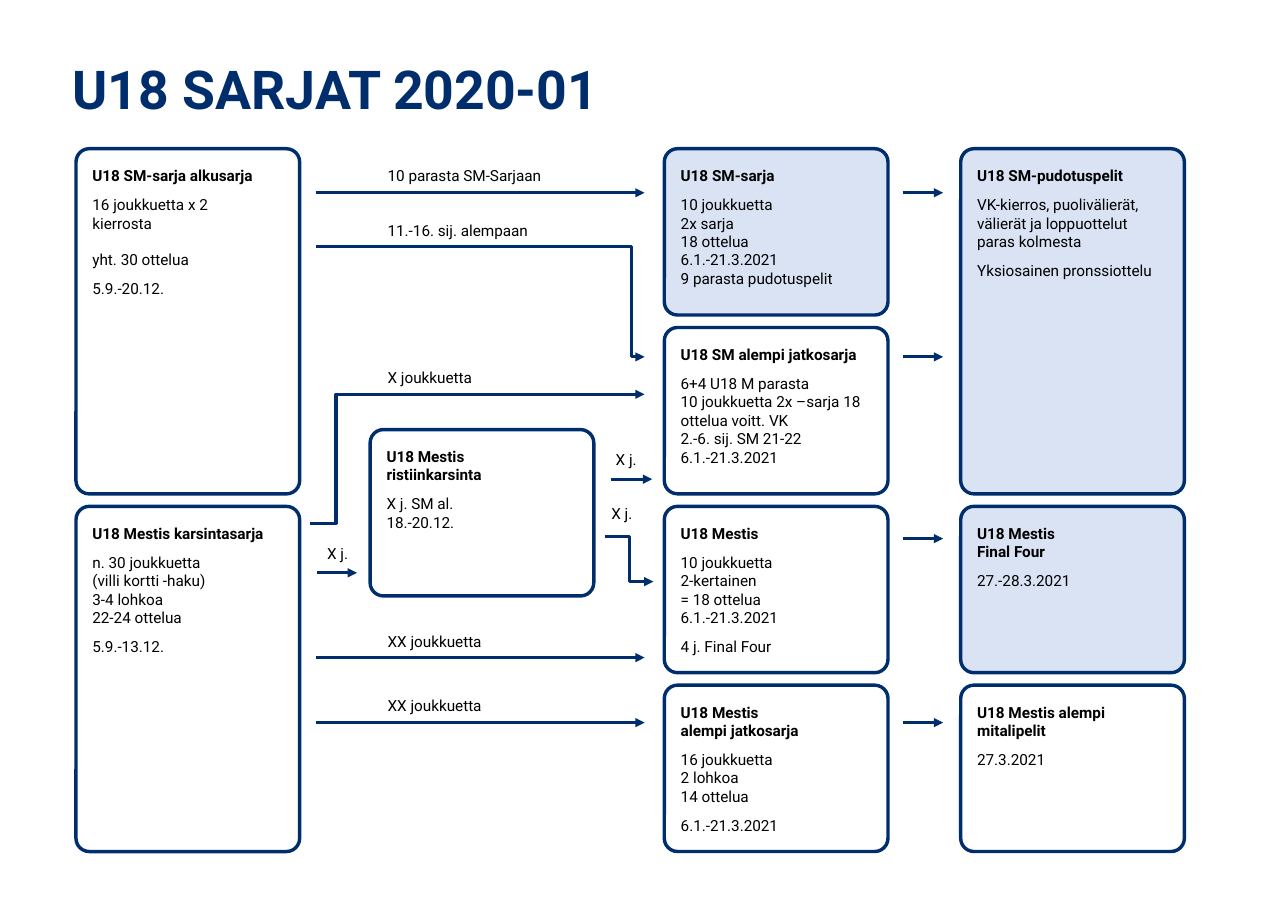
from lxml import etree
from pptx import Presentation
from pptx import util as u
from pptx.dml.color import RGBColor
from pptx.enum import shapes, text
from pptx.oxml.ns import qn

COLORS = {"navy": "002E6D", "pale": "DAE3F3", "black": "000000"}
FONT = "Roboto"

START, CROSS, SERIES, FINALS = 0.69, 3.36, 6.03, 8.72
BOX_WIDTH, BOX_HEIGHT = 2.03, 1.51
TOP, ROW_STEP = 1.35, 4.87 / 3
ROWS = [TOP + row * ROW_STEP for row in range(4)]
TALL = ROW_STEP + BOX_HEIGHT
CORNER = 0.12
GROUP_GAP, LINE_GAP = 7, 12

# left, top, height, fill, text width, heading, groups of (space before, lines)
BOXES = [
    (START, ROWS[0], TALL, None, 1.81, "U18 SM-sarja alkusarja",
     [(GROUP_GAP, ["16 joukkuetta x 2 kierrosta"]),
      (LINE_GAP, ["yht. 30 ottelua"]),
      (GROUP_GAP, ["5.9.-20.12."])]),
    (START, ROWS[2], TALL, None, 1.81, "U18 Mestis karsintasarja",
     [(GROUP_GAP, ["n. 30 joukkuetta", "(villi kortti -haku)", "3-4 lohkoa",
                   "22-24 ottelua"]),
      (GROUP_GAP, ["5.9.-13.12."])]),
    (CROSS, 3.9, BOX_HEIGHT, None, 1.81, "U18 Mestis\vristiinkarsinta",
     [(GROUP_GAP, ["X j. SM al.", "18.-20.12."])]),
    (SERIES, ROWS[0], BOX_HEIGHT, "pale", 1.81, "U18 SM-sarja",
     [(GROUP_GAP, ["10 joukkuetta", "2x sarja", "18 ottelua", "6.1.-21.3.2021",
                   "9 parasta pudotuspelit"])]),
    (SERIES, ROWS[1], BOX_HEIGHT, None, 1.94, "U18 SM alempi jatkosarja",
     [(GROUP_GAP, ["6+4 U18 M parasta",
                   "10 joukkuetta 2x –sarja 18 ottelua voitt. VK",
                   "2.-6. sij. SM 21-22", "6.1.-21.3.2021"])]),
    (SERIES, ROWS[2], BOX_HEIGHT, None, 1.94, "U18 Mestis",
     [(GROUP_GAP, ["10 joukkuetta", "2-kertainen", "= 18 ottelua",
                   "6.1.-21.3.2021"]),
      (GROUP_GAP, ["4 j. Final Four"])]),
    (SERIES, ROWS[3], BOX_HEIGHT, None, 1.81, "U18 Mestis\valempi jatkosarja",
     [(GROUP_GAP, ["16 joukkuetta", "2 lohkoa", "14 ottelua"]),
      (GROUP_GAP, ["6.1.-21.3.2021"])]),
    (FINALS, ROWS[0], TALL, "pale", 1.81, "U18 SM-pudotuspelit",
     [(GROUP_GAP, ["VK-kierros, puolivälierät,\vvälierät ja loppuottelut\v"
                   "paras kolmesta"]),
      (GROUP_GAP, ["Yksiosainen pronssiottelu"])]),
    (FINALS, ROWS[2], BOX_HEIGHT, "pale", 1.81, "U18 Mestis\vFinal Four",
     [(GROUP_GAP, ["27.-28.3.2021"])]),
    (FINALS, ROWS[3], BOX_HEIGHT, None, 1.81, "U18 Mestis alempi\vmitalipelit",
     [(GROUP_GAP, ["27.3.2021"])]),
]

# left, top, width, wording
LABELS = [
    (3.42, 1.46, 1.97, "10 parasta SM-Sarjaan"),
    (3.42, 1.96, 2.24, "11.-16. sij. alempaan"),
    (3.42, 3.29, 1.81, "X joukkuetta"),
    (3.42, 5.69, 1.81, "XX joukkuetta"),
    (3.42, 6.27, 1.81, "XX joukkuetta"),
    (2.87, 4.89, 0.43, "X j."),
    (5.49, 4.04, 0.43, "X j."),
    (5.45, 4.53, 0.43, "X j."),
]

# from x, to x, heights
STRAIGHT_ARROWS = [
    (8.2, 8.56, (1.75, 3.24, 4.89, 6.56)),
    (2.87, 5.85, (1.75, 5.97, 6.56)),
    (5.55, 5.92, (4.35,)),
    (2.88, 3.24, (5.2,)),
]

# from x, from y, to x, to y, x of the bend
BENT_ARROWS = [
    (2.87, 2.24, 5.85, 3.24, 5.73),
    (2.81, 4.75, 5.85, 3.58, 3.05),
    (5.49, 4.87, 5.93, 5.28, 5.71),
]


def write(paragraph, words, size=10, bold=False, color="black", before=0):
    paragraph.text = words
    paragraph.space_before = u.Pt(before)
    font = paragraph.font
    for run in paragraph.runs:
        font = run.font
        font.name, font.size, font.bold = FONT, u.Pt(size), bold
        font.color.rgb = RGBColor.from_string(COLORS[color])


class SeriesChart:
    def __init__(self, slide, line_color="navy", box_line=2.25, arrow_line=2):
        self.slide = slide
        self.line_color = RGBColor.from_string(COLORS[line_color])
        self.box_line = u.Pt(box_line)
        self.arrow_line = u.Pt(arrow_line)

    def frame(self, left, top, width, height):
        """Add an empty wrapping text box and return its text frame."""
        area = self.slide.shapes.add_textbox(
            *map(u.Inches, (left, top, width, height))).text_frame
        area.word_wrap = True
        area.vertical_anchor = text.MSO_ANCHOR.TOP
        return area

    def label(self, left, top, width, words, height=0.57, **style):
        write(self.frame(left, top, width, height).paragraphs[0], words, **style)

    def box(self, left, top, height, fill, text_width, heading, groups):
        card = self.slide.shapes.add_shape(
            shapes.MSO_SHAPE.ROUNDED_RECTANGLE,
            *map(u.Inches, (left, top, BOX_WIDTH, height)))
        card.adjustments[0] = CORNER / min(BOX_WIDTH, height)
        card.shadow.inherit = False
        card.line.color.rgb, card.line.width = self.line_color, self.box_line
        if fill:
            card.fill.solid()
            card.fill.fore_color.rgb = RGBColor.from_string(COLORS[fill])
        else:
            card.fill.background()

        body = self.frame(left + 0.05, top + 0.11, text_width, BOX_HEIGHT)
        write(body.paragraphs[0], heading, bold=True)
        for gap, lines in groups:
            for index, line in enumerate(lines):
                write(body.add_paragraph(), line, before=0 if index else gap)

    def arrow(self, x1, y1, x2, y2, bend=None):
        kind = shapes.MSO_CONNECTOR
        link = self.slide.shapes.add_connector(
            kind.STRAIGHT if bend is None else kind.ELBOW,
            *map(u.Inches, (x1, y1, x2, y2)))
        link.line.color.rgb, link.line.width = self.line_color, self.arrow_line
        properties = link._element.spPr
        etree.SubElement(properties.find(qn("a:ln")), qn("a:tailEnd"), type="triangle")
        etree.SubElement(properties, qn("a:effectLst"))
        if bend is not None:
            share = round((bend - x1) / (x2 - x1) * 100000)
            etree.SubElement(properties.find(".//" + qn("a:avLst")), qn("a:gd"),
                             name="adj1", fmla=f"val {share}")


def main():
    deck = Presentation()
    deck.slide_width, deck.slide_height = u.Inches(11.69), u.Inches(8.27)
    chart = SeriesChart(deck.slides.add_slide(deck.slide_layouts[6]))

    chart.label(0.56, 0.46, 9.64, "U18 SARJAT 2020-01", height=0.69,
                size=35, bold=True, color="navy")
    for box in BOXES:
        chart.box(*box)
    for x1, x2, heights in STRAIGHT_ARROWS:
        for y in heights:
            chart.arrow(x1, y, x2, y)
    for bent in BENT_ARROWS:
        chart.arrow(*bent)
    for label in LABELS:
        chart.label(*label)

    deck.save("out.pptx")


if __name__ == "__main__":
    main()
